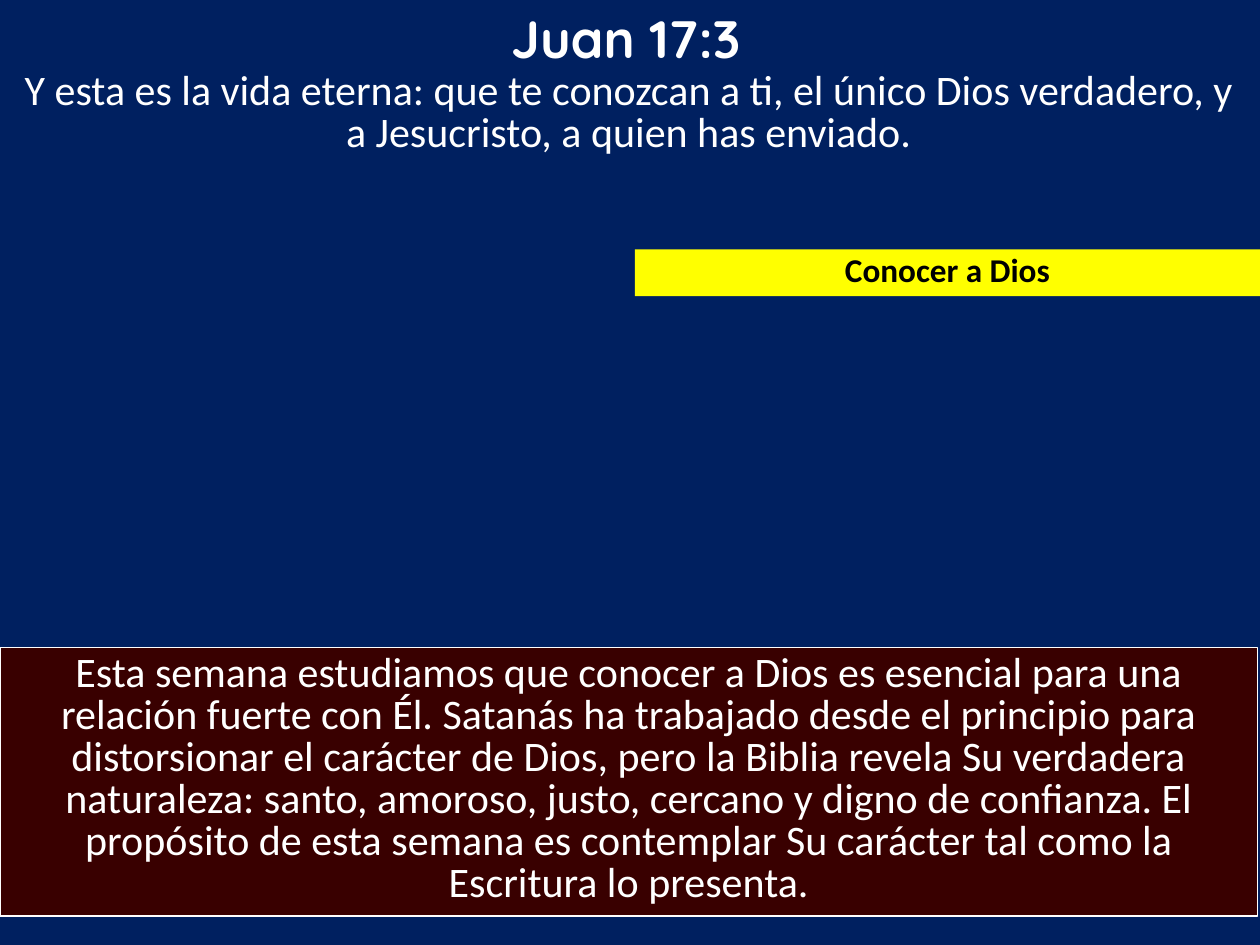
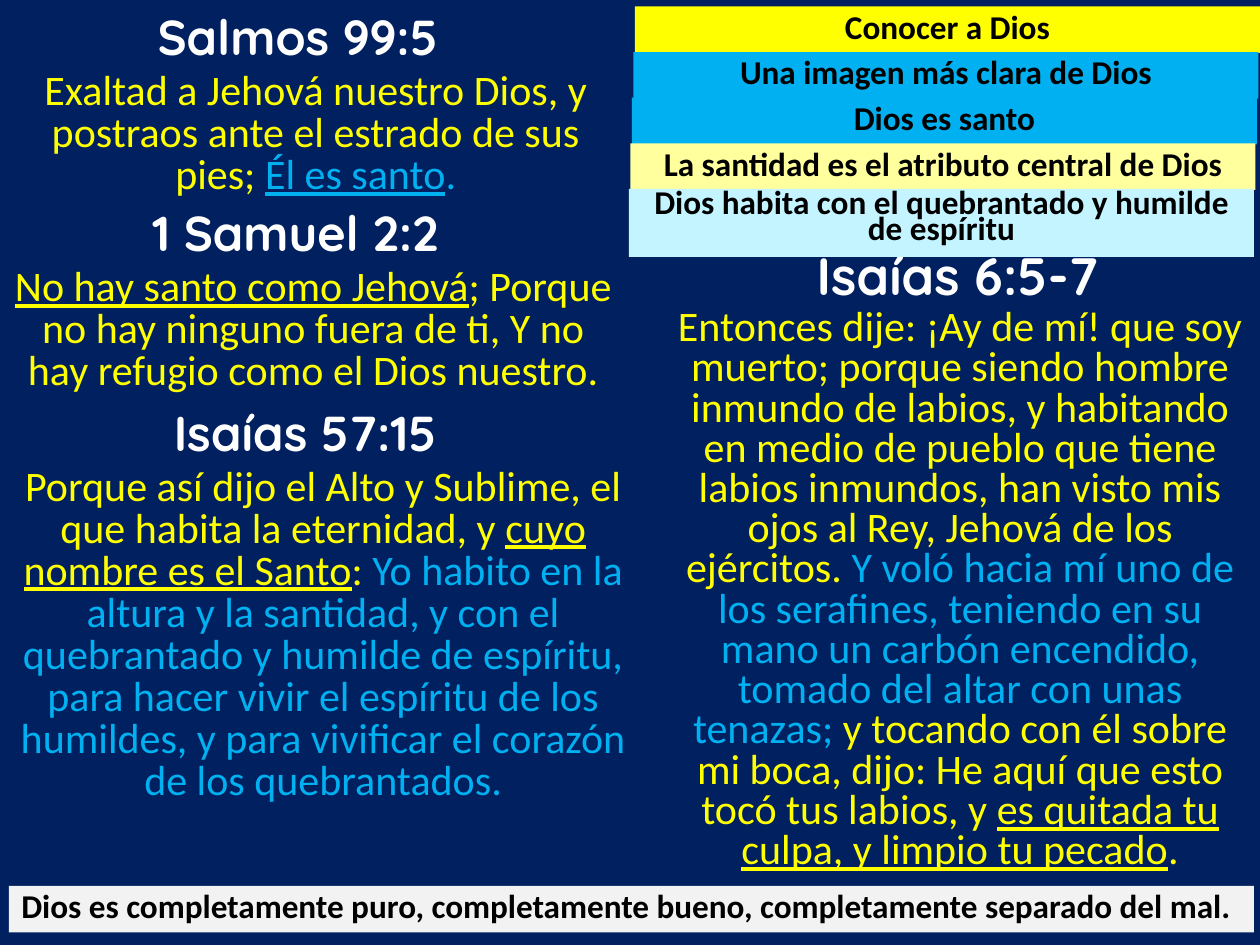
from dataclasses import dataclass

from pptx import Presentation
from pptx.dml.color import RGBColor as RGB
from pptx.enum.shapes import MSO_SHAPE as Shape
from pptx.enum.text import MSO_ANCHOR as Anchor, MSO_AUTO_SIZE as AutoSize, PP_ALIGN as Align
from pptx.util import Cm, Pt


@dataclass(frozen=True)
class Theme:
    navy: str = "002060"
    white: str = "FFFFFF"
    black: str = "000000"
    yellow: str = "FFFF00"
    pale_yellow: str = "FFFF9E"
    blue: str = "00B0F0"
    pale_blue: str = "C3F4FF"
    maroon: str = "390000"
    grey: str = "F2F2F2"
    head_font: str = "Quicksand"
    body_font: str = "Calibri"
    head_size: int = 30
    small_head_size: int = 28
    body_size: int = 24
    band_size: int = 19
    border: float = 0.75


T = Theme()
WIDTH, HEIGHT = 25.4, 19.05
BAND_W, BAND_H = 12.6, 0.94


# Shared parts; a box is (left, top, width, height) in centimetres
def new_slide(prs):
    s = prs.slides.add_slide(prs.slide_layouts[6])
    s.background.fill.solid()
    s.background.fill.fore_color.rgb = RGB.from_string(T.navy)
    return s


def write(sp, runs, font, size, bold=False, spacing=None, align=Align.CENTER):
    """Fill a shape with one paragraph of (text, colour, underline) runs."""
    tf = sp.text_frame
    tf.word_wrap = True
    tf.auto_size = AutoSize.SHAPE_TO_FIT_TEXT
    tf.vertical_anchor = Anchor.TOP
    p = tf.paragraphs[0]
    p.alignment = align
    if spacing:
        p.line_spacing = Pt(spacing)
    for text, colour, underline in runs:
        r = p.add_run()
        r.text = text
        r.font.name, r.font.size, r.font.bold = font, Pt(size), bold
        r.font.color.rgb = RGB.from_string(colour)
        r.font.underline = underline


def add_text(s, box, runs, *style, **options):
    write(s.shapes.add_textbox(*map(Cm, box)), runs, *style, **options)


def add_panel(s, box, fill, line=None):
    sp = s.shapes.add_shape(Shape.RECTANGLE, *map(Cm, box))
    sp.shadow.inherit = False
    sp.fill.solid()
    sp.fill.fore_color.rgb = RGB.from_string(fill)
    if line:
        sp.line.color.rgb = RGB.from_string(line)
        sp.line.width = Pt(T.border)
    else:
        sp.line.fill.background()
    return sp


def add_heading(s, box, text, size):
    add_text(s, box, [(text, T.white, False)], T.head_font, size, bold=True)


def add_verse(s, box, runs, spacing=T.body_size):
    add_text(s, box, runs, T.body_font, T.body_size, spacing=spacing)


def add_band(s, box, text, fill, spacing=T.band_size, align=Align.CENTER):
    write(add_panel(s, box, fill), [(text, T.black, False)], T.body_font,
          T.band_size, bold=True, spacing=spacing, align=align)


# Slide 1: memory verse and purpose of the week
def purpose_slide(prs):
    s = new_slide(prs)
    add_heading(s, (6.71, 0, 11.81, 1.55), "Juan 17:3", T.head_size)
    add_verse(s, (0, 1.32, 25.35, 1.98), [
        ("Y esta es la vida eterna: que te conozcan a ti, el único Dios verdadero, "
         "y a Jesucristo, a quien has enviado.", T.white, False)])
    add_band(s, (12.8, 5.03, BAND_W, BAND_H), "Conocer a Dios", T.yellow)
    purpose = add_panel(s, (0, 13.06, 25.35, 5.41), T.maroon, T.white)
    write(purpose, [
        ("Esta semana estudiamos que conocer a Dios es esencial para una relación "
         "fuerte con Él. Satanás ha trabajado desde el principio para distorsionar "
         "el carácter de Dios, pero la Biblia revela Su verdadera naturaleza: santo, "
         "amoroso, justo, cercano y digno de confianza. El propósito de esta semana "
         "es contemplar Su carácter tal como la Escritura lo presenta.",
         T.white, False)], T.body_font, T.body_size, spacing=T.body_size)


# Slide 2: passages on the left, outline and long passage on the right
PASSAGES = [
    ("Salmos 99:5", -0.05, 0, 2.84, [
        ("Exaltad a Jehová nuestro Dios, y postraos ante el estrado de sus pies; ",
         T.yellow, False),
        ("Él es santo", T.blue, True),
        (".", T.blue, False)]),
    ("1 Samuel 2:2", -0.1, 3.96, 2.84, [
        ("No hay santo como Jehová", T.yellow, True),
        ("; Porque no hay ninguno fuera de ti, Y no hay refugio como el Dios nuestro.",
         T.yellow, False)]),
    ("Isaías 57:15", 0.1, 7.98, 7.11, [
        ("Porque así dijo el Alto y Sublime, el que habita la eternidad, y ",
         T.yellow, False),
        ("cuyo nombre es el Santo", T.yellow, True),
        (": ", T.yellow, False),
        ("Yo habito en la altura y la santidad, y con el quebrantado y humilde de "
         "espíritu, para hacer vivir el espíritu de los humildes, y para vivificar "
         "el corazón de los quebrantados.", T.blue, False)]),
]

OUTLINE = [
    ("Conocer a Dios", T.yellow),
    ("Una imagen más clara de Dios", T.blue),
    ("Dios es santo", T.blue),
    ("La santidad es el atributo central de Dios", T.pale_yellow),
]

ISAIAH_6 = [
    ("Entonces dije: ¡Ay de mí! que soy muerto; porque siendo hombre inmundo de "
     "labios, y habitando en medio de pueblo que tiene labios inmundos, han visto "
     "mis ojos al Rey, Jehová de los ejércitos. ", T.yellow, False),
    ("Y voló hacia mí uno de los serafines, teniendo en su mano un carbón encendido, "
     "tomado del altar con unas tenazas; ", T.blue, False),
    ("y tocando con él sobre mi boca, dijo: He aquí que esto tocó tus labios, y ",
     T.yellow, False),
    ("es quitada tu culpa, y limpio tu pecado", T.yellow, True),
    (".", T.yellow, False),
]


def passage(s, left, top, height, title, runs):
    add_heading(s, (left + 0.15, top, 11.81, 1.45), title, T.small_head_size)
    add_verse(s, (left, top + 1.32, 12.83, height), runs)


def outline(s, left, top):
    pitch, drift = 0.92, 0.03
    for i, (text, fill) in enumerate(OUTLINE):
        add_band(s, (left - i * drift, top + i * pitch, BAND_W, BAND_H), text, fill)
    n = len(OUTLINE)
    # Two-line closing band with tighter lines
    add_band(s, (left - n * drift, top + n * pitch, BAND_W, 1.37),
             "Dios habita con el quebrantado y humilde de espíritu",
             T.pale_blue, spacing=15)


def passages_slide(prs):
    s = new_slide(prs)
    for title, left, top, height, runs in PASSAGES:
        passage(s, left, top, height, title, runs)
    add_heading(s, (15.9, 4.78, 6.81, 1.55), "Isaías 6:5-7", T.head_size)
    add_verse(s, (13.36, 6.12, 11.99, 11.76), ISAIAH_6, spacing=23)
    outline(s, 12.8, 0.13)
    # Closing statement
    add_band(s, (0.18, 17.86, 25.1, BAND_H),
             "Dios es completamente puro, completamente bueno, "
             "completamente separado del mal.", T.grey, align=Align.LEFT)


def main():
    prs = Presentation()
    prs.slide_width, prs.slide_height = Cm(WIDTH), Cm(HEIGHT)
    purpose_slide(prs)
    passages_slide(prs)
    prs.save("out.pptx")


if __name__ == "__main__":
    main()
